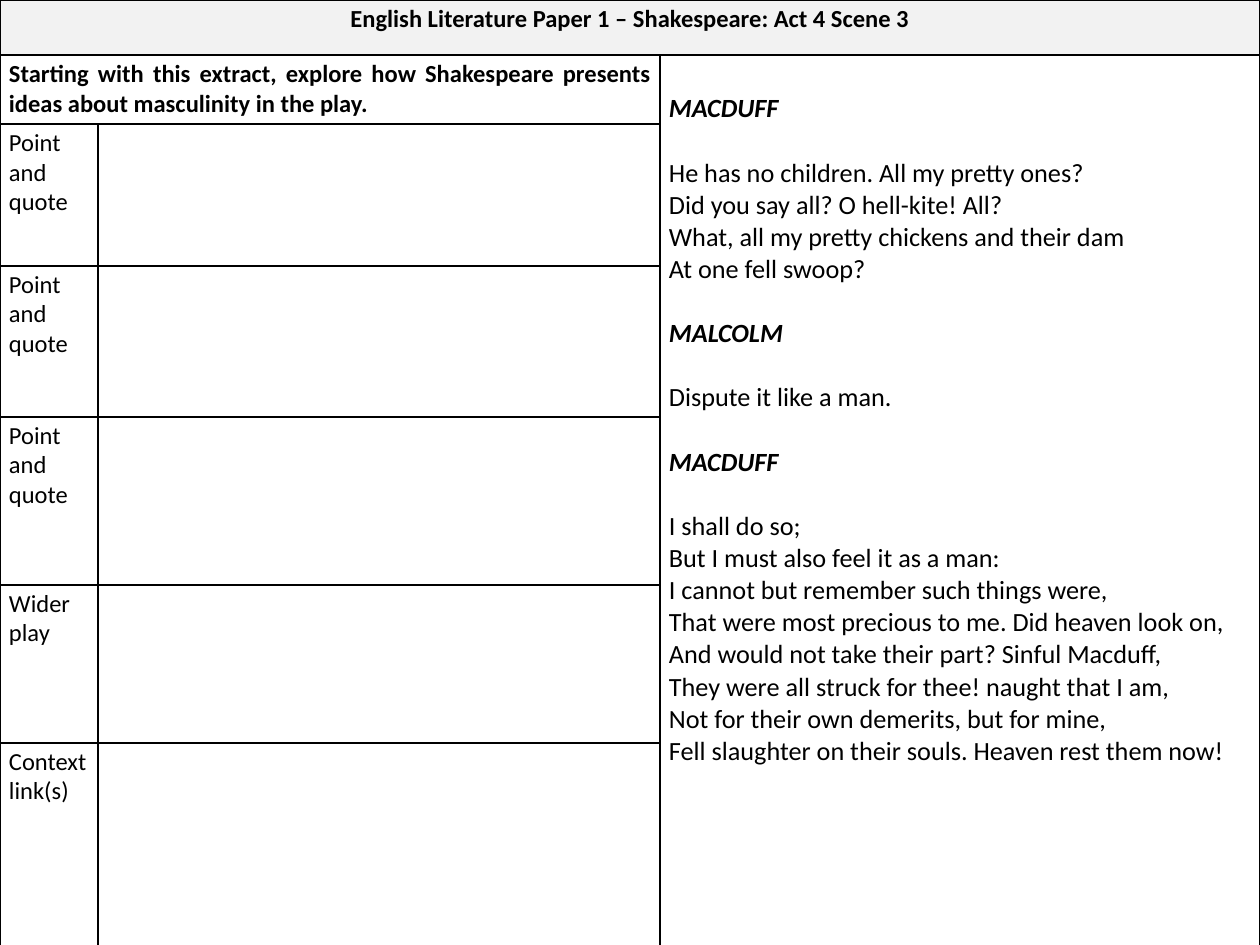
from dataclasses import dataclass

import pptx
import pptx.dml.color
import pptx.enum.text
import pptx.oxml
import pptx.oxml.ns
import pptx.table
import pptx.util

ALIGN = pptx.enum.text.PP_ALIGN
HUES = {"ink": "000000", "head": "F2F2F2"}
FACE = "Calibri"
WIDE, HIGH = 1260, 945
COLS = [98, 562, 600]
ROWS = [55, 69, 142, 151, 168, 158, 209]
SIDE, EDGE = 9, 4
DROP = 38  # top margin of the extract
GAP = 18.3  # one line of the extract, in points


@dataclass
class Line:
    text: str
    size: int = 14
    bold: bool = False
    slant: bool = False
    align: ALIGN = ALIGN.LEFT


@dataclass
class Speech:
    name: str
    verse: list[str]


TITLE = Line("English Literature Paper 1 – Shakespeare: Act 4 Scene 3",
             bold=True, align=ALIGN.CENTER)
TASK = Line("Starting with this extract, explore how Shakespeare presents "
            "ideas about masculinity in the play.",
            bold=True, align=ALIGN.JUSTIFY)
LABELS = ["Point and quote"] * 3 + ["Wider play", "Context link(s)"]
EXTRACT = [
    Speech("MACDUFF", [
        "He has no children. All my pretty ones?",
        "Did you say all? O hell-kite! All?",
        "What, all my pretty chickens and their dam",
        "At one fell swoop?",
    ]),
    Speech("MALCOLM", ["Dispute it like a man."]),
    Speech("MACDUFF", [
        "I shall do so;",
        "But I must also feel it as a man:",
        "I cannot but remember such things were,",
        "That were most precious to me. Did heaven look on,",
        "And would not take their part? Sinful Macduff,",
        "They were all struck for thee! naught that I am,",
        "Not for their own demerits, but for mine,",
        "Fell slaughter on their souls. Heaven rest them now!",
    ]),
]


def px(count: int) -> pptx.util.Emu:
    return pptx.util.Emu(round(count * 914400 / 126))


def color(name: str) -> pptx.dml.color.RGBColor:
    return pptx.dml.color.RGBColor.from_string(HUES[name])


def frame(cell: pptx.table._Cell) -> None:
    """Give a cell its margins, black borders and no fill."""
    cell.margin_left = cell.margin_right = px(SIDE)
    cell.margin_top = cell.margin_bottom = px(EDGE)
    props = cell._tc.get_or_add_tcPr()
    for tag in ("lnL", "lnR", "lnT", "lnB"):
        props.append(pptx.oxml.parse_xml(
            f'<a:{tag} {pptx.oxml.ns.nsdecls("a")} w="12700"><a:solidFill>'
            f'<a:srgbClr val="{HUES["ink"]}"/></a:solidFill></a:{tag}>'))
    cell.fill.background()


def write(cell: pptx.table._Cell, lines: list[Line]) -> None:
    body = cell.text_frame
    for spot, line in enumerate(lines):
        para = body.add_paragraph() if spot else body.paragraphs[0]
        para.text = line.text
        para.alignment = line.align
        font = para.font
        font.name, font.size = FACE, pptx.util.Pt(line.size)
        font.bold, font.italic = line.bold, line.slant
        font.color.rgb = color("ink")


def recite(cell: pptx.table._Cell, scene: list[Speech]) -> None:
    """Write the speeches, with a line's gap around each speaker."""
    lines = []
    for part in scene:
        lines.append(Line(part.name, 15, bold=True, slant=True))
        lines += [Line(text, 15) for text in part.verse]
    write(cell, lines)
    cell.margin_top = px(DROP)
    for spot, (line, para) in enumerate(zip(lines, cell.text_frame.paragraphs)):
        if line.slant:
            para.space_before = pptx.util.Pt(GAP if spot else 0)
            para.space_after = pptx.util.Pt(GAP)


def main() -> None:
    deck = pptx.Presentation()
    deck.slide_width, deck.slide_height = px(WIDE), px(HIGH)
    slide = deck.slides.add_slide(deck.slide_layouts[6])
    grid = slide.shapes.add_table(len(ROWS), len(COLS), 0, 0,
                                  px(sum(COLS)), px(sum(ROWS))).table
    grid.first_row = grid.horz_banding = False
    for col, width in zip(grid.columns, COLS):
        col.width = px(width)
    for row, height in zip(grid.rows, ROWS):
        row.height = px(height)
    for cell in grid.iter_cells():
        frame(cell)

    title, task, extract = grid.cell(0, 0), grid.cell(1, 0), grid.cell(1, 2)
    title.merge(grid.cell(0, 2))
    task.merge(grid.cell(1, 1))
    extract.merge(grid.cell(len(ROWS) - 1, 2))

    title.fill.solid()
    title.fill.fore_color.rgb = color("head")
    write(title, [TITLE])
    write(task, [TASK])
    recite(extract, EXTRACT)
    for row, label in enumerate(LABELS, start=2):
        write(grid.cell(row, 0), [Line(label)])
    deck.save("out.pptx")


if __name__ == "__main__":
    main()
